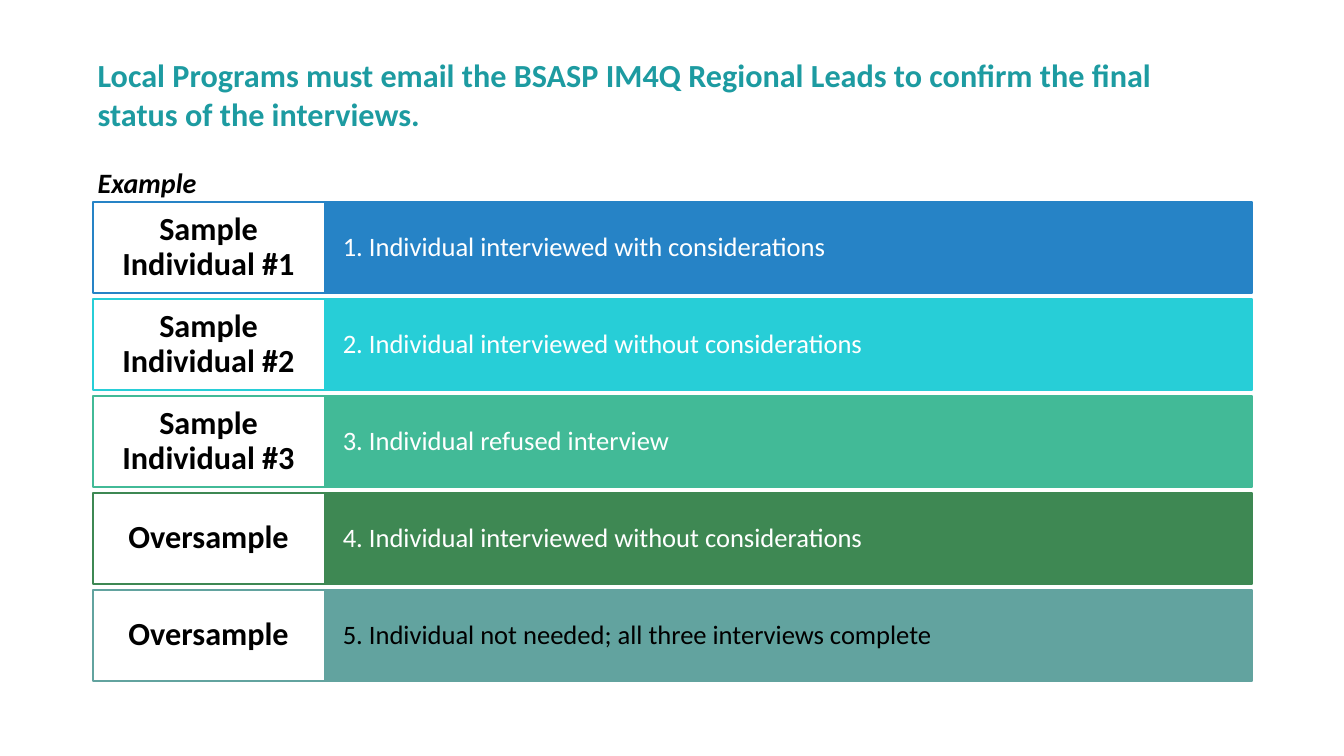
"""Build the slide on confirming the final status of the interviews."""
from dataclasses import dataclass

from pptx import Presentation
from pptx.dml.color import RGBColor
from pptx.enum.shapes import MSO_SHAPE
from pptx.enum.text import MSO_ANCHOR, PP_ALIGN
from pptx.shapes.autoshape import Shape
from pptx.slide import Slide
from pptx.util import Inches, Pt

RECTANGLE = MSO_SHAPE.RECTANGLE
TOP, MIDDLE = MSO_ANCHOR.TOP, MSO_ANCHOR.MIDDLE
LEFT, CENTER = PP_ALIGN.LEFT, PP_ALIGN.CENTER

WHITE = RGBColor(0xFF, 0xFF, 0xFF)
BLACK = RGBColor(0x00, 0x00, 0x00)
TEAL = RGBColor(0x1D, 0x9B, 0xA1)
BLUE = RGBColor(0x26, 0x83, 0xC6)
CYAN = RGBColor(0x27, 0xCE, 0xD7)
MINT = RGBColor(0x42, 0xBA, 0x97)
GREEN = RGBColor(0x3E, 0x88, 0x53)
SAGE = RGBColor(0x62, 0xA3, 0x9F)

GRID_LEFT, GRID_TOP = 0.92, 2.0
GRID_WIDTH, GRID_HEIGHT = 11.5, 4.76
LABEL_WIDTH = GRID_WIDTH / 5
ROW_HEIGHT = 0.91


@dataclass(frozen=True)
class Box:
    """Position and size in inches."""

    left: float
    top: float
    width: float
    height: float

    def emu(self) -> tuple[int, int, int, int]:
        """Return the box in slide units."""
        return (Inches(self.left), Inches(self.top),
                Inches(self.width), Inches(self.height))


@dataclass(frozen=True)
class TextStyle:
    """Look of one block of text."""

    size: int
    color: RGBColor
    bold: bool = False
    italic: bool = False
    align: PP_ALIGN = LEFT
    anchor: MSO_ANCHOR = TOP
    spacing: float = 1.0
    inset_x: float = 0.1
    inset_y: float = 0.05


@dataclass(frozen=True)
class Interview:
    """One row: who was sampled and how the interview ended."""

    sample: str
    status: str
    color: RGBColor
    status_color: RGBColor = WHITE


INTERVIEWS = [
    Interview("Sample Individual #1", "1. Individual interviewed with considerations", BLUE),
    Interview("Sample Individual #2", "2. Individual interviewed without considerations", CYAN),
    Interview("Sample Individual #3", "3. Individual refused interview", MINT),
    Interview("Oversample", "4. Individual interviewed without considerations", GREEN),
    Interview("Oversample", "5. Individual not needed; all three interviews complete", SAGE, BLACK),
]

HEADING_STYLE = TextStyle(23, TEAL, bold=True)
EXAMPLE_STYLE = TextStyle(20, BLACK, bold=True, italic=True)
SAMPLE_STYLE = TextStyle(23, BLACK, bold=True, align=CENTER, anchor=MIDDLE,
                         spacing=0.9, inset_x=0.12, inset_y=0.09)


def status_style(color: RGBColor) -> TextStyle:
    """Return the style of a status cell in the given text colour."""
    return TextStyle(19, color, anchor=MIDDLE, spacing=0.9, inset_x=0.18, inset_y=0.23)


def write(holder: Shape, text: str, style: TextStyle) -> None:
    """Put styled text into a shape."""
    frame = holder.text_frame
    paragraph = frame.paragraphs[0]
    run = paragraph.add_run()
    run.text = text
    inset_x, inset_y = Inches(style.inset_x), Inches(style.inset_y)
    formats = [
        (frame, {"word_wrap": True, "vertical_anchor": style.anchor,
                 "margin_left": inset_x, "margin_right": inset_x,
                 "margin_top": inset_y, "margin_bottom": inset_y}),
        (paragraph, {"alignment": style.align, "line_spacing": style.spacing}),
        (run.font, {"name": "Calibri", "size": Pt(style.size),
                    "bold": style.bold, "italic": style.italic}),
    ]
    for target, values in formats:
        for attribute, value in values.items():
            setattr(target, attribute, value)
    run.font.color.rgb = style.color


def add_caption(slide: Slide, box: Box, text: str, style: TextStyle) -> None:
    """Add free-standing text."""
    write(slide.shapes.add_textbox(*box.emu()), text, style)


def add_cell(slide: Slide, box: Box, fill: RGBColor, border: RGBColor,
             text: str, style: TextStyle) -> None:
    """Add a bordered rectangle with text."""
    cell = slide.shapes.add_shape(RECTANGLE, *box.emu())
    cell.shadow.inherit = False
    cell.fill.solid()
    cell.fill.fore_color.rgb = fill
    cell.line.color.rgb = border
    cell.line.width = Pt(1.5)
    write(cell, text, style)


def add_interview(slide: Slide, top: float, interview: Interview) -> None:
    """Add the status cell and the sample cell of one row."""
    status_box = Box(GRID_LEFT + LABEL_WIDTH, top, GRID_WIDTH - LABEL_WIDTH, ROW_HEIGHT)
    sample_box = Box(GRID_LEFT, top, LABEL_WIDTH, ROW_HEIGHT)
    add_cell(slide, status_box, interview.color, interview.color,
             interview.status, status_style(interview.status_color))
    add_cell(slide, sample_box, WHITE, interview.color, interview.sample, SAMPLE_STYLE)


def main() -> None:
    """Build and save the presentation."""
    presentation = Presentation()
    presentation.slide_width, presentation.slide_height = Inches(13.33), Inches(7.5)
    slide = presentation.slides.add_slide(presentation.slide_layouts[6])
    add_caption(slide, Box(0.87, 0.5, 11.47, 0.89),
                "Local Programs must email the BSASP IM4Q Regional Leads "
                "to confirm the final status of the interviews.", HEADING_STYLE)
    pitch = (GRID_HEIGHT - ROW_HEIGHT) / (len(INTERVIEWS) - 1)
    for row, interview in enumerate(INTERVIEWS):
        add_interview(slide, GRID_TOP + row * pitch, interview)
    add_caption(slide, Box(0.87, 1.59, 3, 0.44), "Example", EXAMPLE_STYLE)
    presentation.save("out.pptx")


if __name__ == "__main__":
    main()
